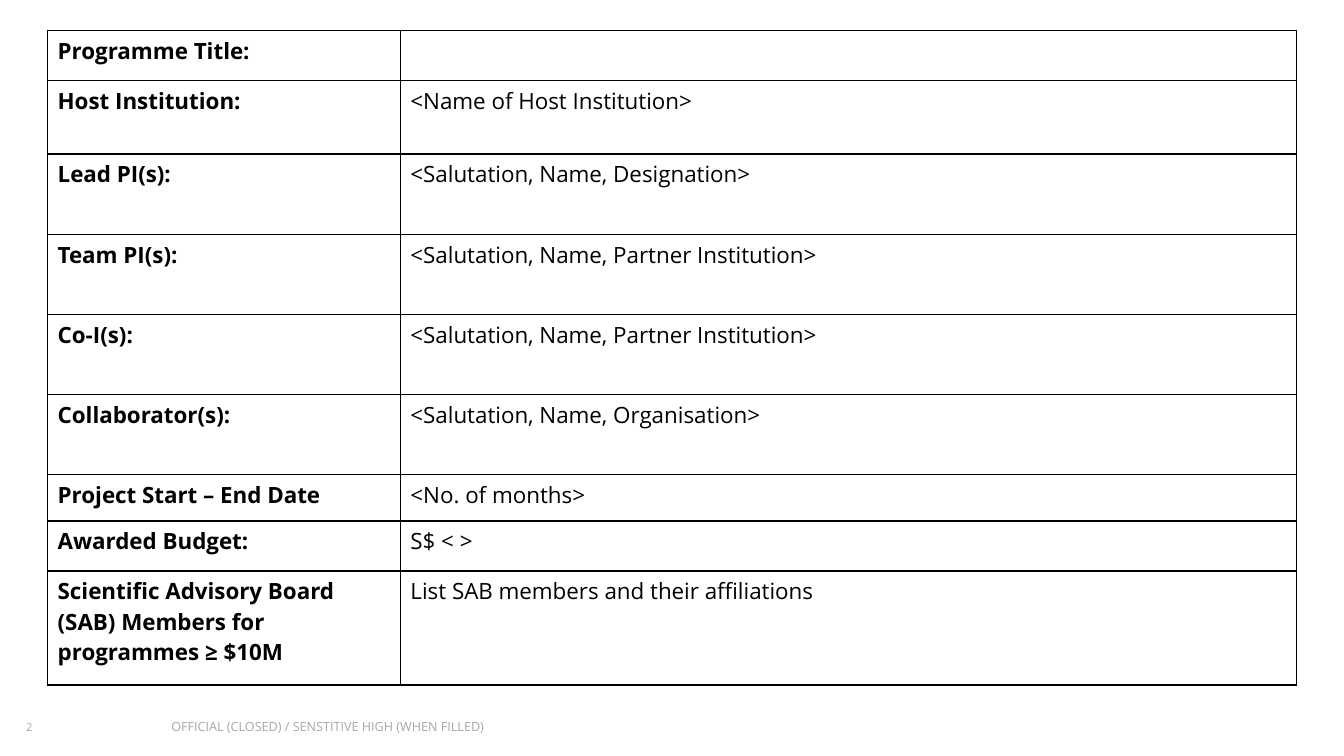
from pptx import Presentation
from pptx.dml.color import RGBColor
from pptx.oxml import parse_xml
from pptx.oxml.ns import nsdecls
from pptx.util import Cm, Pt

FONT = "Open Sans"
BLACK, GREY = "000000", "767171"
COLUMN_WIDTHS = (8.89, 22.58)
# Label, entry, row height in cm
ROWS = [
    ("Programme Title:", "", 1.27),
    ("Host Institution:", "<Name of Host Institution>", 1.85),
    ("Lead PI(s):", "<Salutation, Name, Designation>", 2.02),
    ("Team PI(s):", "<Salutation, Name, Partner Institution>", 2.02),
    ("Co-I(s):", "<Salutation, Name, Partner Institution>", 2.02),
    ("Collaborator(s):", "<Salutation, Name, Organisation>", 2.02),
    ("Project Start – End Date", "<No. of months>", 1.17),
    ("Awarded Budget:", "S$ < >", 1.26),
    ("Scientific Advisory Board (SAB) Members for programmes ≥ $10M",
     "List SAB members and their affiliations", 2.87),
]


def rgb(value):
    return RGBColor.from_string(value)


def add_run(p, text, size, color, bold=False):
    r = p.add_run()
    r.text = text
    r.font.name = FONT
    r.font.size = Pt(size)
    r.font.bold = bold
    r.font.color.rgb = rgb(color)
    return r


def set_borders(cell, color):
    properties = cell._tc.get_or_add_tcPr()
    for position, side in enumerate(("lnL", "lnR", "lnT", "lnB")):
        properties.insert(position, parse_xml(
            f'<a:{side} {nsdecls("a")} w="{Pt(1)}"><a:solidFill>'
            f'<a:srgbClr val="{color}"/></a:solidFill></a:{side}>'))


def fill_cell(cell, text, bold):
    cell.fill.background()
    set_borders(cell, BLACK)
    if text:
        add_run(cell.text_frame.paragraphs[0], text, 16, BLACK, bold)


def add_details_table(s):
    height = sum(row[2] for row in ROWS)
    table = s.shapes.add_table(len(ROWS), 2, Cm(1.2), Cm(0.76),
                               Cm(sum(COLUMN_WIDTHS)), Cm(height)).table
    table.first_row = table.horz_banding = False
    for column, width in zip(table.columns, COLUMN_WIDTHS):
        column.width = Cm(width)
    for row, (label, entry, row_height) in zip(table.rows, ROWS):
        row.height = Cm(row_height)
        fill_cell(row.cells[0], label, True)
        fill_cell(row.cells[1], entry, False)


def add_footer_text(s, text, left, width, size, bottom=0, spacing=None):
    sp = s.shapes.add_textbox(Cm(left), Cm(18.11), Cm(width), Cm(0.48))
    tf = sp.text_frame
    tf.word_wrap = True
    tf.margin_left = tf.margin_right = tf.margin_top = 0
    tf.margin_bottom = Cm(bottom)
    p = tf.paragraphs[0]
    p.line_spacing = spacing
    r = add_run(p, text, size, GREY)
    # Soften the grey with transparency
    color = r.font.fill._xPr.find(".//{*}srgbClr")
    color.append(parse_xml(f'<a:alpha {nsdecls("a")} val="61000"/>'))


def main():
    prs = Presentation()
    prs.slide_width, prs.slide_height = Cm(33.87), Cm(19.05)
    s = prs.slides.add_slide(prs.slide_layouts[6])

    # Footer: page number and classification
    add_footer_text(s, "2", 0.66, 2.01, 8, spacing=1.1)
    add_footer_text(s, "OFFICIAL (CLOSED) / SENSTITIVE HIGH (WHEN FILLED)",
                    4.32, 13.54, 9, bottom=0.13)

    # Programme details
    add_details_table(s)
    prs.save("out.pptx")


if __name__ == "__main__":
    main()
